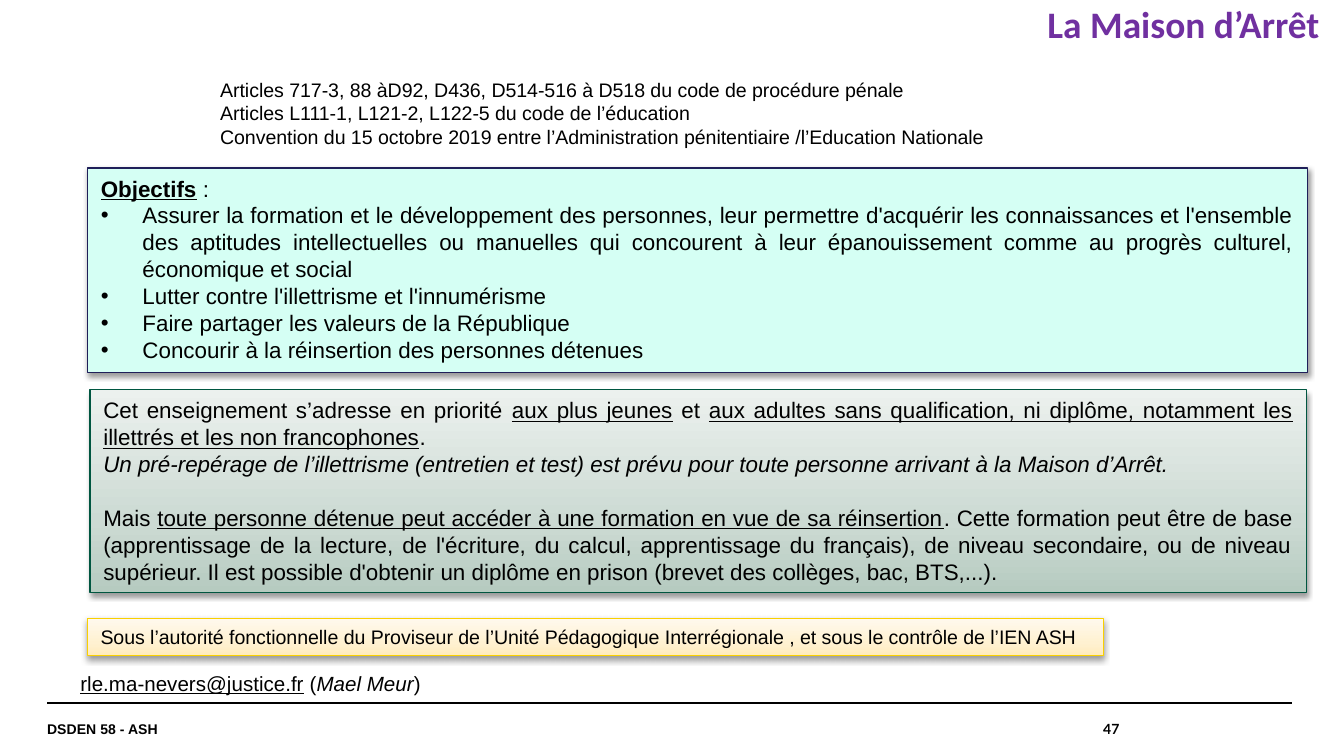
from dataclasses import dataclass
from typing import NamedTuple

from lxml import etree
from pptx import Presentation
from pptx.dml.color import RGBColor
from pptx.enum.shapes import MSO_CONNECTOR, MSO_SHAPE
from pptx.enum.text import MSO_ANCHOR, MSO_AUTO_SIZE, PP_ALIGN
from pptx.oxml.ns import qn
from pptx.util import Inches, Pt


@dataclass(frozen=True)
class Theme:
    text: str = "000000"
    title: str = "7030A0"
    goals_fill: str = "D5FFF4"
    goals_line: str = "1F1F59"
    audience_line: str = "005640"
    audience_stops: tuple = ((0, "B6CBC0"), (35, "CCDAD3"), (100, "ECF1EE"))
    authority_line: str = "F9D000"
    authority_stops: tuple = ((0, "FFEBBD"), (35, "FFF1D1"), (100, "FFF9EE"))
    body_font: str = "Arial"
    title_font: str = "Calibri"
    number_font: str = "Lato"
    title_size: float = 20
    body_size: float = 12
    contact_size: float = 11
    small_size: float = 10.5
    footer_size: float = 7.5
    line_factor: float = 1.2


class Box(NamedTuple):
    left: float
    top: float
    width: float
    height: float


class Span(NamedTuple):
    text: str
    bold: bool = False
    italic: bool = False
    underline: bool = False


class Para(NamedTuple):
    spans: tuple
    bullet: bool = False
    gap_before: float = 0


THEME = Theme()
SLIDE_WIDTH = 10
SLIDE_HEIGHT = SLIDE_WIDTH * 9 / 16
PADDING = (0.1, 0.05)
BULLET_INDENT = 0.31

REFERENCES = [
    Para((Span(line),))
    for line in (
        "Articles 717-3, 88 àD92, D436, D514-516 à D518 du code de procédure pénale",
        "Articles L111-1, L121-2, L122-5 du code de l’éducation",
        "Convention du 15 octobre 2019 entre l’Administration pénitentiaire /l’Education Nationale",
    )
]
GOALS = [Para((Span("Objectifs", bold=True, underline=True), Span(" : ")))] + [
    Para((Span(goal),), bullet=True)
    for goal in (
        "Assurer la formation et le développement des personnes, leur permettre d'acquérir "
        "les connaissances et l'ensemble des aptitudes intellectuelles ou manuelles qui "
        "concourent à leur épanouissement comme au progrès culturel, économique et social",
        "Lutter contre l'illettrisme et l'innumérisme",
        "Faire partager les valeurs de la République",
        "Concourir à la réinsertion des personnes détenues",
    )
]
AUDIENCE = [
    Para((
        Span("Cet enseignement s’adresse en priorité "),
        Span("aux plus jeunes", underline=True),
        Span(" et "),
        Span("aux adultes sans qualification, ni diplôme, notamment les illettrés "
             "et les non francophones", underline=True),
        Span("."),
    )),
    Para((Span("Un pré-repérage de l’illettrisme (entretien et test) est prévu pour toute "
               "personne arrivant à la Maison d’Arrêt.", italic=True),)),
    Para((
        Span("Mais "),
        Span("toute personne détenue peut accéder à une formation en vue de sa réinsertion",
             underline=True),
        Span(". Cette formation peut être de base (apprentissage de la lecture, de l'écriture, "
             "du calcul, apprentissage du français), de niveau secondaire, ou de niveau "
             "supérieur. Il est possible d'obtenir un diplôme en prison (brevet des collèges, "
             "bac, BTS,...)."),
    ), gap_before=THEME.body_size * THEME.line_factor),
]
AUTHORITY = [Para((Span("Sous l’autorité fonctionnelle du Proviseur de l’Unité Pédagogique "
                        "Interrégionale , et sous le contrôle de l’IEN ASH"),))]
CONTACT = [Para((Span("rle.ma-nevers@justice.fr", underline=True), Span(" ("),
                 Span("Mael Meur", italic=True), Span(")")))]


def place(shape, box: Box) -> None:
    shape.left, shape.top, shape.width, shape.height = map(Inches, box)


def set_bullet(paragraph, bullet: bool) -> None:
    properties = paragraph._p.get_or_add_pPr()
    indent = Inches(BULLET_INDENT) if bullet else 0
    properties.set("marL", str(indent))
    properties.set("indent", str(-indent))
    if bullet:
        etree.SubElement(properties, qn("a:buFont"), typeface="Arial")
        etree.SubElement(properties, qn("a:buChar"), char="•")
    else:
        etree.SubElement(properties, qn("a:buNone"))


def write(shape, paras: list[Para], size: float, *, align=PP_ALIGN.LEFT,
          anchor=MSO_ANCHOR.TOP, padding: tuple = PADDING, font: str = THEME.body_font,
          color: str = THEME.text, spacing: float | None = None) -> None:
    """Fill a shape with styled runs; spacing is a multiple, or fixed by the theme."""
    frame = shape.text_frame
    frame.word_wrap = True
    frame.auto_size = MSO_AUTO_SIZE.NONE
    frame.vertical_anchor = anchor
    frame.margin_left = frame.margin_right = Inches(padding[0])
    frame.margin_top = frame.margin_bottom = Inches(padding[1])
    for index, para in enumerate(paras):
        paragraph = frame.add_paragraph() if index else frame.paragraphs[0]
        set_bullet(paragraph, para.bullet)
        paragraph.alignment = align
        paragraph.line_spacing = spacing or Pt(size * THEME.line_factor)
        paragraph.space_before = Pt(para.gap_before)
        paragraph.space_after = Pt(0)
        for span in para.spans:
            run = paragraph.add_run()
            run.text = span.text
            run.font.name = font
            run.font.size = Pt(size)
            run.font.color.rgb = RGBColor.from_string(color)
            run.font.bold = span.bold
            run.font.italic = span.italic
            run.font.underline = span.underline


def add_text(slide, box: Box, paras: list[Para], size: float, **style) -> None:
    write(slide.shapes.add_textbox(*map(Inches, box)), paras, size, **style)


def outline_with_shadow(shape, color: str) -> None:
    shape.line.color.rgb = RGBColor.from_string(color)
    shape.line.width = Pt(0.75)
    shape.shadow.inherit = False
    effects = shape._element.spPr.find(qn("a:effectLst"))
    shadow = etree.SubElement(effects, qn("a:outerShdw"), blurRad=str(Pt(3.1)),
                              dist=str(Pt(1.6)), dir="5400000", rotWithShape="0")
    black = etree.SubElement(shadow, qn("a:srgbClr"), val="000000")
    etree.SubElement(black, qn("a:alpha"), val="38000")


def add_gradient_panel(slide, box: Box, stops: tuple, line: str,
                       paras: list[Para], size: float) -> None:
    panel = slide.shapes.add_shape(MSO_SHAPE.RECTANGLE, *map(Inches, box))
    panel.fill.gradient()
    panel.fill.gradient_angle = 90
    stop_list = panel._element.spPr.find(f".//{qn('a:gsLst')}")
    for old_stop in list(stop_list):
        stop_list.remove(old_stop)
    for percent, color in stops:
        stop = etree.SubElement(stop_list, qn("a:gs"), pos=str(percent * 1000))
        etree.SubElement(stop, qn("a:srgbClr"), val=color)
    outline_with_shadow(panel, line)
    write(panel, paras, size, align=PP_ALIGN.JUSTIFY)


def add_footer(slide) -> None:
    top, height = 5.23, 0.39
    rule = slide.shapes.add_connector(MSO_CONNECTOR.STRAIGHT, Inches(0.35), Inches(top),
                                      Inches(9.61), Inches(top))
    rule.line.color.rgb = RGBColor.from_string(THEME.text)
    rule.line.width = Pt(0.8)
    etree.SubElement(rule._element.spPr, qn("a:effectLst"))
    for left, width, label, align, font in (
        (0.35, 6.38, "DSDEN 58 - ASH", PP_ALIGN.LEFT, THEME.body_font),
        (6.85, 1.48, "47", PP_ALIGN.RIGHT, THEME.number_font),
    ):
        add_text(slide, Box(left, top, width, height), [Para((Span(label, bold=True),))],
                 THEME.footer_size, align=align, anchor=MSO_ANCHOR.MIDDLE,
                 padding=(0, 0), font=font)


def main() -> None:
    deck = Presentation()
    deck.slide_width, deck.slide_height = Inches(SLIDE_WIDTH), Inches(SLIDE_HEIGHT)
    slide = deck.slides.add_slide(deck.slide_layouts[1])

    title, goals = slide.shapes.title, slide.placeholders[1]
    place(title, Box(2.56, 0.05, 7.26, 0.31))
    write(title, [Para((Span("La Maison d’Arrêt", bold=True),))], THEME.title_size,
          align=PP_ALIGN.RIGHT, padding=(0, 0), font=THEME.title_font,
          color=THEME.title, spacing=0.9)

    place(goals, Box(0.65, 1.25, 9.08, 1.52))
    goals.fill.solid()
    goals.fill.fore_color.rgb = RGBColor.from_string(THEME.goals_fill)
    outline_with_shadow(goals, THEME.goals_line)
    write(goals, GOALS, THEME.body_size, align=PP_ALIGN.JUSTIFY)

    add_footer(slide)
    add_text(slide, Box(1.54, 0.53, 6.44, 0.63), REFERENCES, THEME.small_size)
    add_gradient_panel(slide, Box(0.67, 2.9, 9.05, 1.51), THEME.audience_stops,
                       THEME.audience_line, AUDIENCE, THEME.body_size)
    add_gradient_panel(slide, Box(0.65, 4.6, 7.56, 0.28), THEME.authority_stops,
                       THEME.authority_line, AUTHORITY, THEME.small_size)
    add_text(slide, Box(0.5, 4.94, 4.44, 0.29), CONTACT, THEME.contact_size)
    deck.save("out.pptx")


if __name__ == "__main__":
    main()
